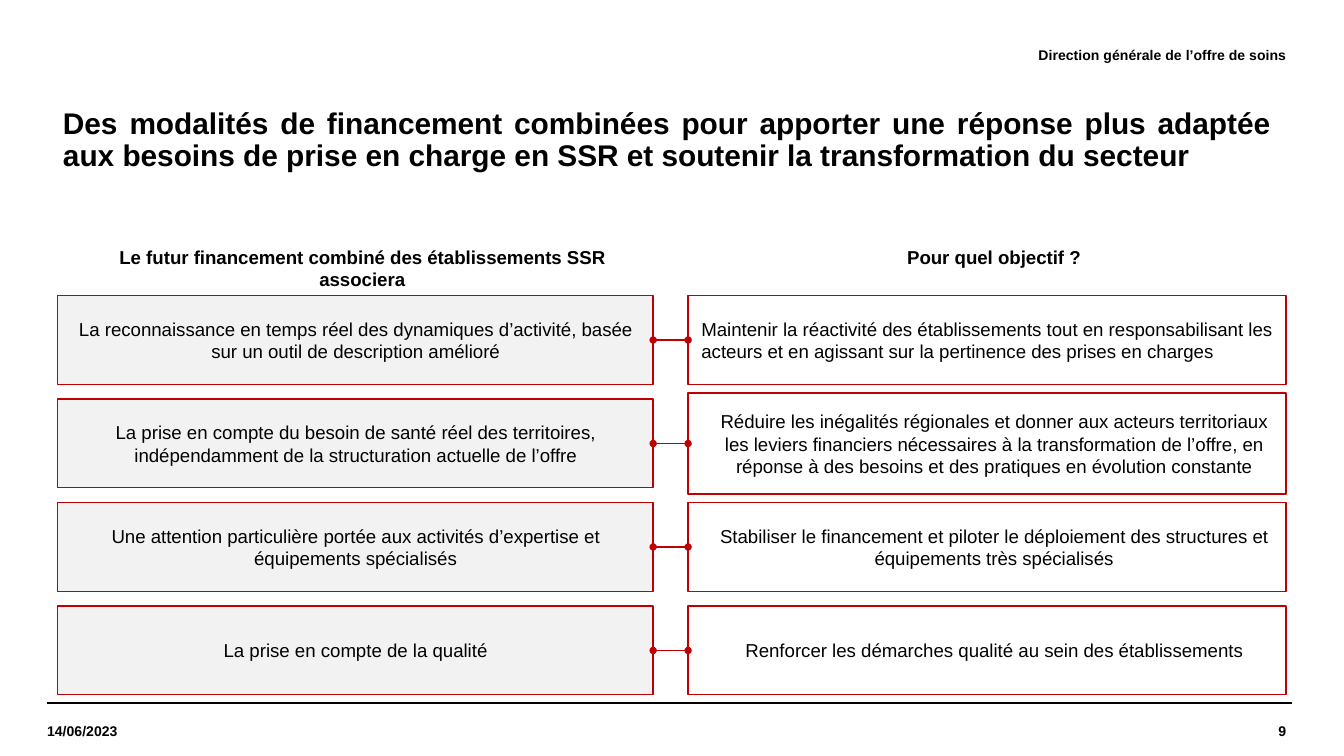
from lxml import etree
from pptx import Presentation
from pptx.dml.color import RGBColor
from pptx.enum.shapes import MSO_CONNECTOR, MSO_SHAPE
from pptx.enum.text import MSO_ANCHOR, PP_ALIGN
from pptx.oxml.ns import qn
from pptx.util import Inches, Pt

RECTANGLE = MSO_SHAPE.RECTANGLE
STRAIGHT = MSO_CONNECTOR.STRAIGHT
TOP, MIDDLE = MSO_ANCHOR.TOP, MSO_ANCHOR.MIDDLE
LEFT, CENTER, RIGHT, JUSTIFY = PP_ALIGN.LEFT, PP_ALIGN.CENTER, PP_ALIGN.RIGHT, PP_ALIGN.JUSTIFY
LEFT_SIDE, RIGHT_SIDE = 1, 3

COLORS = {"text": "000000", "rule": "000000", "accent": "C00000", "panel": "F2F2F2"}
FONT = "Arial"


def rgb(name):
    return RGBColor.from_string(COLORS[name])


def write_text(shape, text, size=10, bold=False, align=LEFT, anchor=MIDDLE,
               margins=(0.1, 0.05), indent=0, space_after=0, line_spacing=None):
    frame = shape.text_frame
    frame.word_wrap = True
    frame.vertical_anchor = anchor
    frame.margin_left = frame.margin_right = Inches(margins[0])
    frame.margin_top = frame.margin_bottom = Inches(margins[1])
    paragraph = frame.paragraphs[0]
    paragraph.alignment = align
    paragraph.space_after = Pt(space_after)
    if line_spacing:
        paragraph.line_spacing = line_spacing
    if indent:
        paragraph._p.get_or_add_pPr().set("marL", str(Inches(indent)))
    run = paragraph.add_run()
    run.text = text
    run.font.name = FONT
    run.font.size = Pt(size)
    run.font.bold = bold
    run.font.color.rgb = rgb("text")


class SlideBuilder:
    def __init__(self, slide):
        self.slide = slide

    def text(self, text, left, top, width, height, **text_format):
        box = self.slide.shapes.add_textbox(
            Inches(left), Inches(top), Inches(width), Inches(height))
        write_text(box, text, **text_format)

    def panel(self, text, left, top, width, height, fill=None, **text_format):
        shape = self.slide.shapes.add_shape(
            RECTANGLE, Inches(left), Inches(top), Inches(width), Inches(height))
        shape.shadow.inherit = False
        if fill:
            shape.fill.solid()
            shape.fill.fore_color.rgb = rgb(fill)
        else:
            shape.fill.background()
        shape.line.color.rgb = rgb("accent")
        shape.line.width = Pt(0.75)
        write_text(shape, text, **text_format)
        return shape

    def line(self, start, end, color, weight):
        points = [Inches(value) for value in (*start, *end)]
        connector = self.slide.shapes.add_connector(STRAIGHT, *points)
        connector.line.color.rgb = rgb(color)
        connector.line.width = Pt(weight)
        etree.SubElement(connector._element.spPr, qn("a:effectLst"))
        return connector

    def link(self, source, target):
        connector = self.line((0, 0), (0, 0), "accent", 0.75)
        connector.begin_connect(source, RIGHT_SIDE)
        connector.end_connect(target, LEFT_SIDE)
        outline = connector.line._get_or_add_ln()
        for end in ("a:headEnd", "a:tailEnd"):
            etree.SubElement(outline, qn(end), type="oval", w="sm", len="sm")


LEFT_X, LEFT_WIDTH = 0.43, 4.43
RIGHT_X, RIGHT_WIDTH = 5.12, 4.45
FIRST_ROW, ROW_STEP, ROW_HEIGHT = 2.2, 0.77, 0.66

OBJECTIVE = {"align": CENTER, "indent": 0.1, "space_after": 5}
# Funding component, objective, objective height, objective format
ROWS = [
    ("La reconnaissance en temps réel des dynamiques d’activité, basée sur un outil de "
     "description amélioré",
     "Maintenir la réactivité des établissements tout en responsabilisant les acteurs et "
     "en agissant sur la pertinence des prises en charges",
     ROW_HEIGHT, {"align": LEFT}),
    ("La prise en compte du besoin de santé réel des territoires, indépendamment de la "
     "structuration actuelle de l’offre",
     "Réduire les inégalités régionales et donner aux acteurs territoriaux les leviers "
     "financiers nécessaires à la transformation de l’offre, en réponse à des besoins et "
     "des pratiques en évolution constante",
     0.75, OBJECTIVE),
    ("Une attention particulière portée aux activités d’expertise et équipements spécialisés",
     "Stabiliser le financement et piloter le déploiement des structures et équipements "
     "très spécialisés",
     ROW_HEIGHT, OBJECTIVE),
    ("La prise en compte de la qualité",
     "Renforcer les démarches qualité au sein des établissements",
     ROW_HEIGHT, OBJECTIVE),
]


def main():
    presentation = Presentation()
    # Widescreen 16:9
    presentation.slide_width = Inches(10)
    presentation.slide_height = Inches(10) * 9 // 16
    builder = SlideBuilder(presentation.slides.add_slide(presentation.slide_layouts[6]))

    # Footer rules, page number, date and header
    for left in (0.35, 0.39):
        builder.line((left, 5.23), (left + 9.22, 5.23), "rule", 0.8)
    small = {"size": 7.5, "bold": True, "margins": (0, 0)}
    builder.text("9", 8.09, 5.24, 1.48, 0.39, align=RIGHT, **small)
    builder.text("14/06/2023", 0.35, 5.25, 1.28, 0.38, **small)
    builder.text("Direction générale de l’offre de soins", 3.14, 0.21, 6.43, 0.39,
                 align=RIGHT, **small)

    # Title
    builder.text("Des modalités de financement combinées pour apporter une réponse plus "
                 "adaptée aux besoins de prise en charge en SSR et soutenir la "
                 "transformation du secteur",
                 0.35, 0.75, 9.21, 0.59, size=16, bold=True, align=JUSTIFY,
                 indent=0.02, line_spacing=0.9)

    # Column headings
    builder.text("Pour quel objectif ?", RIGHT_X, 1.76, RIGHT_WIDTH, 0.3,
                 bold=True, margins=(0, 0), **OBJECTIVE)
    builder.text("Le futur financement combiné des établissements SSR associera",
                 LEFT_X, 1.78, LEFT_WIDTH, 0.44, bold=True, anchor=TOP, **OBJECTIVE)

    # Linked rows, each objective centred on its funding component
    for index, (component, objective, height, text_format) in enumerate(ROWS):
        top = FIRST_ROW + index * ROW_STEP
        source = builder.panel(component, LEFT_X, top, LEFT_WIDTH, ROW_HEIGHT,
                               fill="panel", align=CENTER)
        target = builder.panel(objective, RIGHT_X, top + (ROW_HEIGHT - height) / 2,
                               RIGHT_WIDTH, height, **text_format)
        builder.link(source, target)

    presentation.save("out.pptx")


if __name__ == "__main__":
    main()
